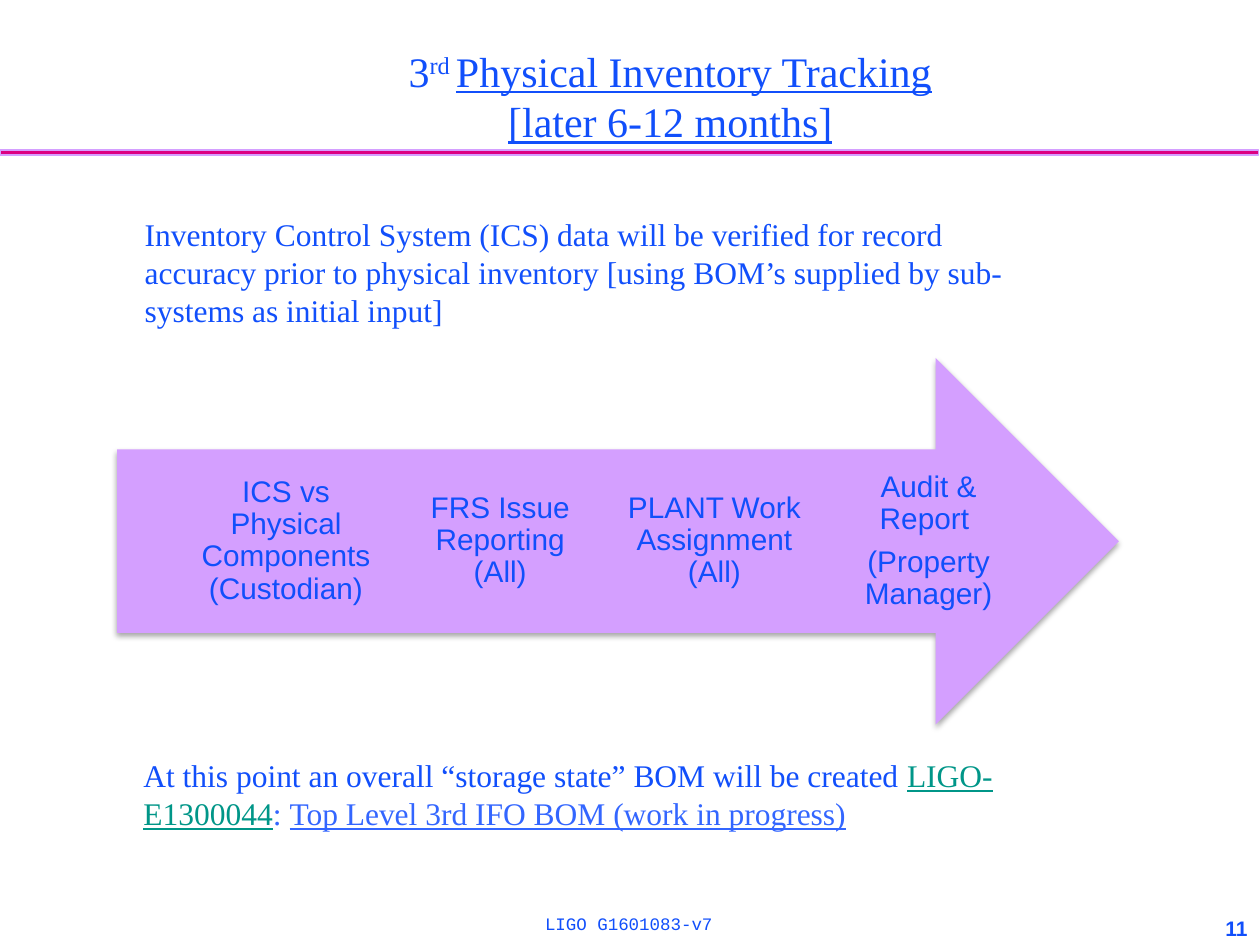
from lxml import etree
from pptx import Presentation
from pptx.dml.color import RGBColor
from pptx.enum.shapes import MSO_SHAPE
from pptx.enum.text import MSO_ANCHOR, PP_ALIGN
from pptx.oxml import parse_xml
from pptx.util import Inches, Pt

RECTANGLE, RIGHT_ARROW = MSO_SHAPE.RECTANGLE, MSO_SHAPE.RIGHT_ARROW
LEFT, CENTER, RIGHT = PP_ALIGN.LEFT, PP_ALIGN.CENTER, PP_ALIGN.RIGHT
TOP, MIDDLE = MSO_ANCHOR.TOP, MSO_ANCHOR.MIDDLE
DRAWING_NS = "http://schemas.openxmlformats.org/drawingml/2006/main"
COLORS = {"text": "114FFB", "rule": "DC0081", "lilac": "D49FFF",
          "document": "009688", "bom": "3366FF"}

prs = Presentation()
prs.slide_width, prs.slide_height = Inches(10), Inches(7.5)
COL, ROW = prs.slide_width / 10, prs.slide_height / 7.5
slide = prs.slides.add_slide(prs.slide_layouts[6])


def grid(left, top, width, height):
    """Turn columns and rows into slide lengths."""
    return int(left * COL), int(top * ROW), int(width * COL), int(height * ROW)


def add_text(place, paragraphs, font, size, align=LEFT, frame_format=None,
             paragraph_format=None, bold=None):
    """Add a text box; each paragraph is a list of (text, run options)."""
    frame = slide.shapes.add_textbox(*grid(*place)).text_frame
    frame.word_wrap = True
    for name, value in (frame_format or {}).items():
        setattr(frame, name, value)
    for index, runs in enumerate(paragraphs):
        paragraph = frame.paragraphs[0] if index == 0 else frame.add_paragraph()
        paragraph.alignment = align
        for name, value in (paragraph_format or {}).items():
            setattr(paragraph, name, value)
        for text, options in runs:
            run = paragraph.add_run()
            run.text = text
            format_values = {"name": font, "size": Pt(size), "bold": bold,
                             "underline": options.get("underline")}
            for name, value in format_values.items():
                setattr(run.font, name, value)
            run.font.color.rgb = RGBColor.from_string(COLORS[options.get("color", "text")])
            if "baseline" in options:
                run._r.get_or_add_rPr().set("baseline", options["baseline"])


# Rule under the title
rule = slide.shapes.add_shape(RECTANGLE, *grid(0, 1.19, 9.99, 0.04))
rule.shadow.inherit = False
rule.fill.solid()
rule.fill.fore_color.rgb = RGBColor.from_string(COLORS["rule"])
rule.line.color.rgb = RGBColor.from_string(COLORS["lilac"])
rule.line.width = Pt(0.75)

# Title, introduction and conclusion
underlined = {"underline": True}
add_text((1.19, 0.31, 8.26, 0.91),
         [[("3", {}), ("rd ", {"baseline": "30000"}),
           ("Physical Inventory Tracking", underlined)],
          [("[later 6-12 months]", underlined)]],
         "Times New Roman", 24, CENTER)
add_text((1.05, 1.66, 7.46, 1.01),
         [[("Inventory Control System (ICS) data will be verified for record accuracy "
            "prior to physical inventory [using BOM’s supplied by sub-systems as "
            "initial input]", {})]],
         "Times New Roman", 18)
add_text((1.04, 5.95, 7.46, 0.71),
         [[("At this point an overall “storage state” BOM will be created ", {}),
           ("LIGO-E1300044", {"color": "document", "underline": True}),
           (": ", {"color": "bom"}),
           ("Top Level 3rd IFO BOM (work in progress)",
            {"color": "bom", "underline": True})]],
         "Times New Roman", 18)

# Process arrow with a soft shadow below it
arrow = slide.shapes.add_shape(RIGHT_ARROW, *grid(0.93, 2.84, 7.95, 2.91))
arrow.shadow.inherit = False
arrow.fill.solid()
arrow.fill.fore_color.rgb = RGBColor.from_string(COLORS["lilac"])
arrow.line.fill.background()
effects = arrow._element.spPr.find(etree.QName(DRAWING_NS, "effectLst").text)
effects.append(parse_xml(
    f'<a:outerShdw xmlns:a="{DRAWING_NS}" blurRad="{Pt(3.1)}" dist="{Pt(1.8)}" '
    'dir="5400000" rotWithShape="0"><a:srgbClr val="000000">'
    '<a:alpha val="35000"/></a:srgbClr></a:outerShdw>'))

# Steps at equal distances along the arrow
steps = [["ICS vs Physical Components (Custodian)"],
         ["FRS Issue Reporting (All)"],
         ["PLANT Work Assignment (All)"],
         ["Audit & Report ", "(Property Manager)"]]
step_frame = {"vertical_anchor": MIDDLE, "margin_left": 0, "margin_right": 0,
              "margin_top": Inches(0.19), "margin_bottom": Inches(0.19)}
step_spacing = {"line_spacing": 0.9, "space_after": Pt(6)}
for index, lines in enumerate(steps):
    add_text((1.56 + 1.7 * index, 3.57, 1.42, 1.45),
             [[(line, {})] for line in lines],
             "Arial", 17, CENTER, step_frame, step_spacing)

# Footer
add_text((2.6, 7.2, 4.78, 0.3), [[("LIGO G1601083-v7", {})]],
         "Courier New", 10, CENTER, {"vertical_anchor": TOP})
add_text((8.85, 7.23, 1.15, 0.27), [[("11", {})]],
         "Arial", 12, RIGHT, {"vertical_anchor": MIDDLE}, bold=True)

prs.save("out.pptx")
